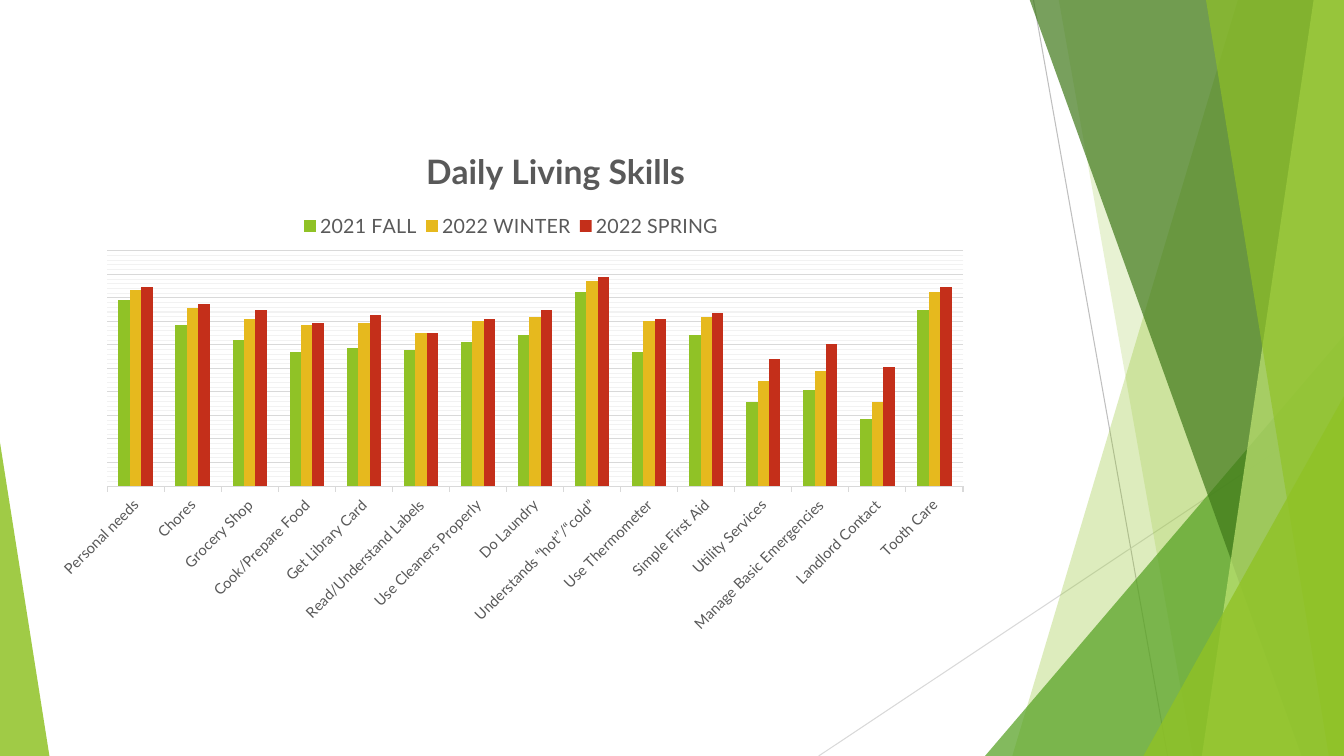
import pptx
import pptx.chart.data
import pptx.dml.color
import pptx.enum.chart
import pptx.enum.shapes
import pptx.oxml
import pptx.oxml.ns
import pptx.util
from pptx.util import Inches

FONT = "Lato"
GREY = "595959"
RIGHT, TOP, BOTTOM = 13.33, -0.01, 7.5

SKILLS = [
    "Personal needs", "Chores", "Grocery Shop", "Cook/Prepare Food",
    "Get Library Card", "Read/Understand Labels", "Use Cleaners Properly",
    "Do Laundry", "Understands “hot”/“cold”", "Use Thermometer",
    "Simple First Aid", "Utility Services", "Manage Basic Emergencies",
    "Landlord Contact", "Tooth Care",
]
TERMS = [
    ("2021 FALL", "90C226",
     [89, 77, 70, 64, 66, 65, 69, 72, 93, 64, 72, 40, 46, 32, 84]),
    ("2022 WINTER", "E6B91E",
     [94, 85, 80, 77, 78, 73, 79, 81, 98, 79, 81, 50, 55, 40, 93]),
    ("2022 SPRING", "C42F1A",
     [95, 87, 84, 78, 82, 73, 80, 84, 100, 80, 83, 61, 68, 57, 95]),
]


def rgb(color):
    return pptx.dml.color.RGBColor.from_string(color)


def element(tag, **attrs):
    e = pptx.oxml.parse_xml(f"<{tag} {pptx.oxml.ns.nsdecls(tag[0])}/>")
    for name, value in attrs.items():
        e.set(name, str(value))
    return e


def style_line(line, color):
    line.color.rgb = rgb(color)
    line.width = pptx.util.Pt(0.75)


def style_font(font, size, color=GREY, bold=False):
    font.name = FONT
    font.size = pptx.util.Pt(size)
    font.bold = bold
    font.color.rgb = rgb(color)


def add_line(slide, x1, y1, x2, y2, color):
    c = slide.shapes.add_connector(
        pptx.enum.shapes.MSO_CONNECTOR.STRAIGHT,
        Inches(x1), Inches(y1), Inches(x2), Inches(y2))
    style_line(c.line, color)
    c._element.spPr.append(element("a:effectLst"))


def fill_glass(s, color, opacity):
    s.shadow.inherit = False
    s.fill.solid()
    s.fill.fore_color.rgb = rgb(color)
    s.line.fill.background()
    clr = s._element.spPr.find(".//" + pptx.oxml.ns.qn("a:srgbClr"))
    clr.append(element("a:alpha", val=opacity * 1000))


def add_band(slide, top_x, bottom_x, color, opacity):
    """A full-height band from a slanted left edge to the right margin."""
    points = [(RIGHT, TOP), (RIGHT, BOTTOM), (bottom_x, BOTTOM)]
    builder = slide.shapes.build_freeform(Inches(top_x), Inches(TOP))
    builder.add_line_segments([(Inches(x), Inches(y)) for x, y in points])
    fill_glass(builder.convert_to_shape(), color, opacity)


def add_triangle(slide, x, y, width, apex, color, opacity):
    s = slide.shapes.add_shape(
        pptx.enum.shapes.MSO_SHAPE.ISOSCELES_TRIANGLE,
        Inches(x), Inches(y), Inches(width), Inches(BOTTOM - y))
    s.adjustments[0] = apex
    fill_glass(s, color, opacity)


def set_layout(parent, index, inner=False, **fractions):
    """Place a chart part by fractions of the chart's size."""
    for old in parent.findall(pptx.oxml.ns.qn("c:layout")):
        parent.remove(old)
    layout, manual = element("c:layout"), element("c:manualLayout")
    if inner:
        manual.append(element("c:layoutTarget", val="inner"))
    for key in ("x", "y"):
        manual.append(element(f"c:{key}Mode", val="edge"))
    for key, value in fractions.items():
        manual.append(element(f"c:{key}", val=value))
    layout.append(manual)
    parent.insert(index, layout)


def style_minor_gridlines(axis, color):
    axis.has_minor_gridlines = True
    parent = axis._element.find(pptx.oxml.ns.qn("c:minorGridlines"))
    for child in (element("c:spPr"),
                  element("a:ln", w=pptx.util.Pt(0.75)),
                  element("a:solidFill"),
                  element("a:srgbClr", val=color)):
        parent.append(child)
        parent = child


def add_skills_chart(slide):
    data = pptx.chart.data.CategoryChartData()
    data.categories = SKILLS
    for name, _, values in TERMS:
        data.add_series(name, values)
    chart = slide.shapes.add_chart(
        pptx.enum.chart.XL_CHART_TYPE.COLUMN_CLUSTERED,
        Inches(0.41), Inches(1.24), Inches(9.32), Inches(5.14), data).chart
    style_font(chart.font, 10, "000000")

    # Columns
    plot = chart.plots[0]
    plot.gap_width = 199
    plot.overlap = 0
    plot.vary_by_categories = False
    for series, (_, color, _) in zip(plot.series, TERMS):
        series.format.fill.solid()
        series.format.fill.fore_color.rgb = rgb(color)
    plot_area = chart._chartSpace.chart.plotArea
    set_layout(plot_area, 0, inner=True, x=0.07, y=0.243, w=0.911, h=0.454)

    # Axes
    tick = pptx.enum.chart.XL_TICK_MARK
    cat = chart.category_axis
    cat.major_tick_mark = tick.OUTSIDE
    cat.minor_tick_mark = tick.NONE
    style_line(cat.format.line, "D9D9D9")
    style_font(cat.tick_labels.font, 10.5)
    body = cat._element.find(
        pptx.oxml.ns.qn("c:txPr")).find(pptx.oxml.ns.qn("a:bodyPr"))
    body.set("rot", str(-45 * 60000))
    val = chart.value_axis
    val.minimum_scale, val.maximum_scale = 0, 112.5
    val.major_unit, val.minor_unit = 11.25, 2.25
    val.has_major_gridlines = True
    style_line(val.major_gridlines.format.line, "D9D9D9")
    style_minor_gridlines(val, "F2F2F2")
    val.visible = False

    # Title and legend
    chart.has_title = True
    title = chart.chart_title
    title.text_frame.text = "Daily Living Skills"
    style_font(title.text_frame.paragraphs[0].runs[0].font, 24, bold=True)
    set_layout(title._element, 1, x=0.403, y=0.03)
    chart.has_legend = True
    legend = chart.legend
    legend.position = pptx.enum.chart.XL_LEGEND_POSITION.TOP
    legend.include_in_layout = False
    style_font(legend.font, 14)
    set_layout(legend._element, 1, x=0.27, y=0.165, w=0.46, h=0.06)


def main():
    prs = pptx.Presentation()
    prs.slide_width, prs.slide_height = Inches(RIGHT), Inches(BOTTOM)
    slide = prs.slides.add_slide(prs.slide_layouts[6])

    # Facets at the sides, from back to front
    add_line(slide, 10.25, 0, 11.58, BOTTOM, "BFBFBF")
    add_line(slide, RIGHT, 4.03, 8.12, BOTTOM, "D9D9D9")
    add_band(slide, 12.28, 10.04, "90C226", 30)
    add_band(slide, 10.5, 11.83, "90C226", 20)
    add_triangle(slide, 9.77, 3.33, 3.56, 1, "54A021", 72)
    add_band(slide, 10.21, 12.91, "3F7819", 70)
    add_band(slide, 13.03, 11.92, "C0E474", 70)
    add_band(slide, 11.96, 13.18, "90C226", 65)
    add_triangle(slide, 11.34, 3.93, 1.99, 1, "90C226", 80)
    add_triangle(slide, 0, 4.39, 0.49, 0, "90C226", 85)

    add_skills_chart(slide)
    prs.save("out.pptx")


if __name__ == "__main__":
    main()
